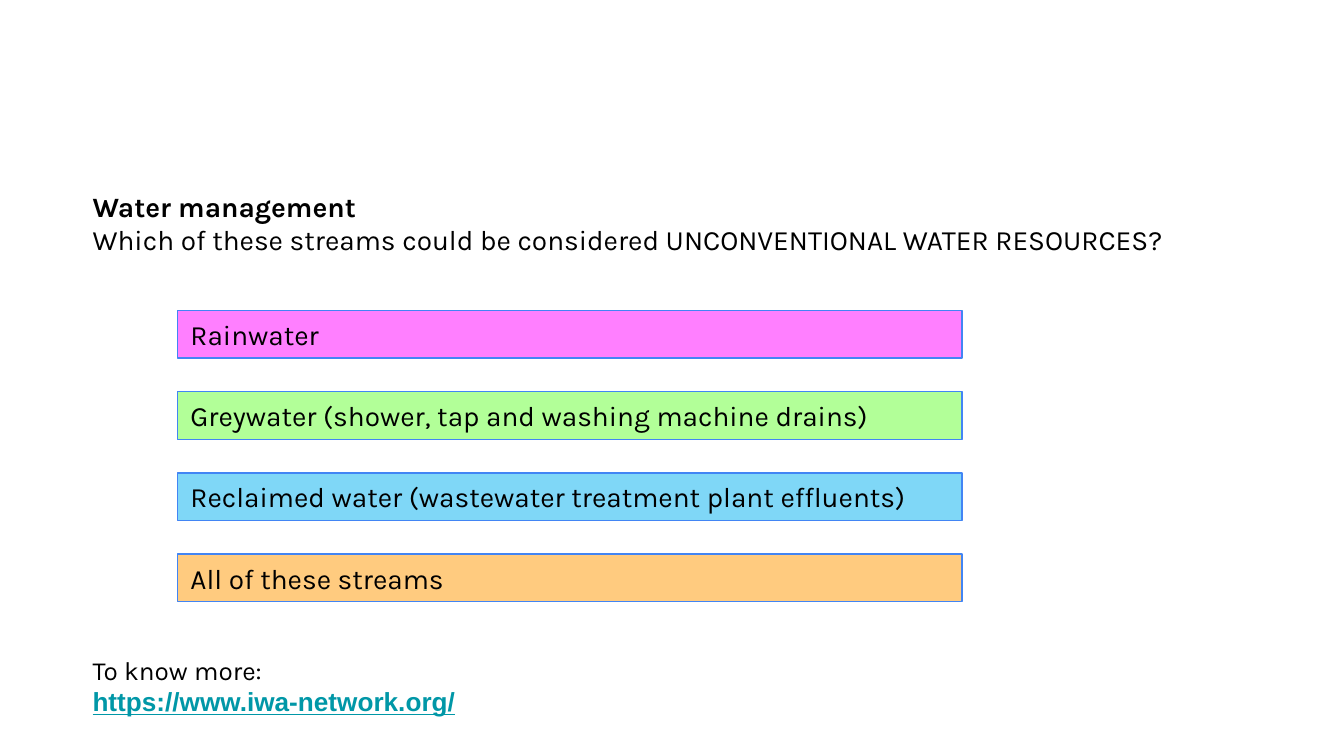
"""Build the water management quiz slide."""
from lxml import etree
from pptx import Presentation
from pptx.dml.color import RGBColor
from pptx.enum import shapes, text
from pptx.oxml import ns
from pptx.util import Cm, Pt

COLORS = {
    "text": "000000",
    "link": "0097A7",
    "border": "4285F4",
    "rainwater": "FF00FF",
    "greywater": "66FF33",
    "reclaimed": "00B0F0",
    "all": "FF9900",
}
ANSWERS = [
    ("Rainwater", "rainwater"),
    ("Greywater (shower, tap and washing machine drains)", "greywater"),
    ("Reclaimed water (wastewater treatment plant effluents)", "reclaimed"),
    ("All of these streams", "all"),
]
ANSWER_TOP, ANSWER_STEP = 5.87, 1.535
MARGIN_LEFT = 1.75


def color(name):
    return RGBColor.from_string(COLORS[name])


def format_paragraph(para, size, font="Karla", ink="text", bold=False, underline=False):
    para.alignment = text.PP_ALIGN.LEFT
    for span in para.runs:
        span.font.name = font
        span.font.size = Pt(size)
        span.font.bold = bold
        span.font.underline = underline
        span.font.color.rgb = color(ink)


def fill_lines(box, lines):
    frame = box.text_frame
    frame.text = "\n".join(lines)
    frame.word_wrap = True
    frame.auto_size = text.MSO_AUTO_SIZE.NONE
    frame.vertical_anchor = text.MSO_ANCHOR.TOP
    frame.margin_left = 0
    return frame.paragraphs


def add_question(page):
    title = page.shapes.title
    title.left, title.top = Cm(MARGIN_LEFT), Cm(3.45)
    title.width, title.height = Cm(22.3), Cm(1.55)
    heading, question = fill_lines(title, [
        "Water management",
        "Which of these streams could be considered UNCONVENTIONAL WATER RESOURCES?",
    ])
    format_paragraph(heading, 15, bold=True)
    format_paragraph(question, 15)


def add_answer(page, top, label, fill):
    box = page.shapes.add_shape(
        shapes.MSO_SHAPE.RECTANGLE, Cm(3.35), Cm(top), Cm(14.83), Cm(0.9))
    box.shadow.inherit = False
    box.fill.solid()
    box.fill.fore_color.rgb = color(fill)
    tint = box.fill._xPr.find(".//" + ns.qn("a:srgbClr"))
    etree.SubElement(tint, ns.qn("a:alpha"), val="50000")
    box.line.color.rgb = color("border")
    box.line.width = Pt(0.75)
    frame = box.text_frame
    frame.text = label
    frame.word_wrap = True
    frame.vertical_anchor = text.MSO_ANCHOR.MIDDLE
    format_paragraph(frame.paragraphs[0], 15)


def add_reference(page):
    box = page.shapes.add_textbox(Cm(MARGIN_LEFT), Cm(12.24), Cm(23.65), Cm(1.45))
    lead, address = fill_lines(box, ["To know more:", "https://www.iwa-network.org/"])
    format_paragraph(lead, 14)
    format_paragraph(address, 14, "Arial", "link", bold=True, underline=True)


def main():
    deck = Presentation()
    deck.slide_width, deck.slide_height = Cm(25.4), Cm(14.29)
    page = deck.slides.add_slide(deck.slide_layouts.get_by_name("Title Only"))
    add_question(page)
    for index, (label, fill) in enumerate(ANSWERS):
        add_answer(page, ANSWER_TOP + index * ANSWER_STEP, label, fill)
    add_reference(page)
    deck.save("out.pptx")


if __name__ == "__main__":
    main()
